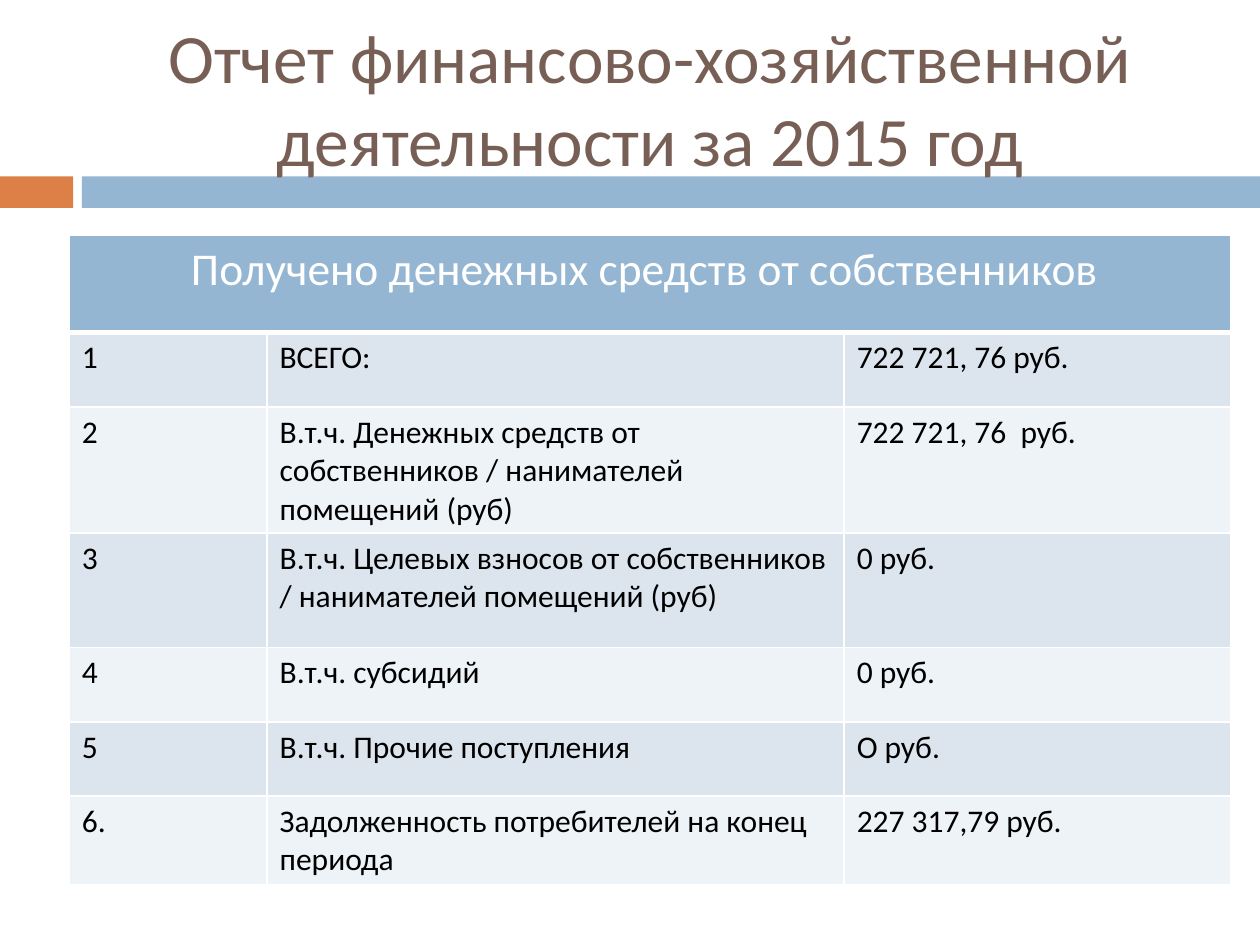
from lxml.etree import SubElement
from pptx import Presentation
from pptx.dml.color import RGBColor
from pptx.enum.shapes import MSO_SHAPE as Shape
from pptx.enum.text import MSO_ANCHOR as Anchor, PP_ALIGN as Align
from pptx.oxml.ns import qn
from pptx.util import Inches, Pt

ORANGE, BLUE, BROWN = "DD8047", "94B6D2", "775F55"
WHITE, BLACK = "FFFFFF", "000000"
BANDS = ["DCE5EE", "EEF3F7"]


def colour(value):
    return RGBColor.from_string(value)


class SlideBuilder:
    font = "Calibri"

    def __init__(self, page):
        self.page = page

    def bar(self, left, top, width, height, fill):
        box = self.page.shapes.add_shape(
            Shape.RECTANGLE, *map(Inches, (left, top, width, height)))
        box.shadow.inherit = False
        box.fill.solid()
        box.fill.fore_color.rgb = colour(fill)
        box.line.fill.background()

    def add_text(self, frame, text, size, ink, align=Align.LEFT):
        para = frame.paragraphs[0]
        para.alignment = align
        span = para.add_run()
        span.text = text
        for name, value in {"name": self.font, "size": Pt(size)}.items():
            setattr(span.font, name, value)
        span.font.color.rgb = colour(ink)

    def title(self, left, top, width, height, text):
        box = self.page.shapes.add_textbox(*map(Inches, (left, top, width, height)))
        frame = box.text_frame
        layout = {"word_wrap": True, "vertical_anchor": Anchor.MIDDLE}
        for name, value in layout.items():
            setattr(frame, name, value)
        self.add_text(frame, text, 39.6, BROWN, Align.CENTER)

    def cell(self, cell, text, fill, size=18, ink=BLACK, align=Align.LEFT, bottom=1):
        self.add_text(cell.text_frame, text, size, ink, align)
        self.borders(cell, bottom)
        cell.fill.solid()
        cell.fill.fore_color.rgb = colour(fill)

    def borders(self, cell, bottom=1):
        props = cell._tc.get_or_add_tcPr()
        for side, width in {"L": 1, "R": 1, "T": 1, "B": bottom}.items():
            line = SubElement(props, qn(f"a:ln{side}"), w=str(Pt(width)))
            fill = SubElement(line, qn("a:solidFill"))
            SubElement(fill, qn("a:srgbClr"), val=WHITE)

    def table(self, left, top, widths, heights, heading, rows):
        table = self.page.shapes.add_table(
            len(heights), len(widths), Inches(left), Inches(top),
            Inches(sum(widths)), Inches(sum(heights))).table
        for column, width in zip(table.columns, widths):
            column.width = Inches(width)
        for row, height in zip(table.rows, heights):
            row.height = Inches(height)

        # Heading across all columns
        head = table.cell(0, 0)
        head.merge(table.cell(0, len(widths) - 1))
        self.cell(head, heading, BLUE, 26, WHITE, Align.CENTER, bottom=3)
        for column in range(1, len(widths)):
            self.borders(table.cell(0, column), bottom=3)

        # Banded body
        for index, row in enumerate(rows):
            for column, text in enumerate(row):
                self.cell(table.cell(index + 1, column), text, BANDS[index % 2])


def main():
    deck = Presentation()
    deck.slide_width, deck.slide_height = Inches(10), Inches(7.5)
    builder = SlideBuilder(deck.slides.add_slide(deck.slide_layouts[6]))

    # Divider and title
    builder.bar(0, 1.4, 0.58, 0.25, ORANGE)
    builder.bar(0.65, 1.4, 9.35, 0.25, BLUE)
    builder.title(0.7, 0.23, 8.92, 1.08,
                  "Отчет финансово-хозяйственной деятельности за 2015 год")

    # Money received from the owners
    builder.table(
        0.55, 1.87, [1.57, 4.58, 3.07],
        [0.77, 0.59, 0.91, 0.91, 0.59, 0.59, 0.64],
        "Получено денежных средств от собственников ",
        [("1", "ВСЕГО:", "722 721, 76 руб."),
         ("2", "В.т.ч. Денежных средств от собственников / нанимателей помещений (руб)",
          "722 721, 76  руб."),
         ("3", "В.т.ч. Целевых взносов от собственников / нанимателей помещений (руб)",
          "0 руб."),
         ("4", "В.т.ч. субсидий", "0 руб."),
         ("5", "В.т.ч. Прочие поступления", "О руб."),
         ("6.", "Задолженность потребителей на конец периода", "227 317,79 руб.")])

    deck.save("out.pptx")


if __name__ == "__main__":
    main()
